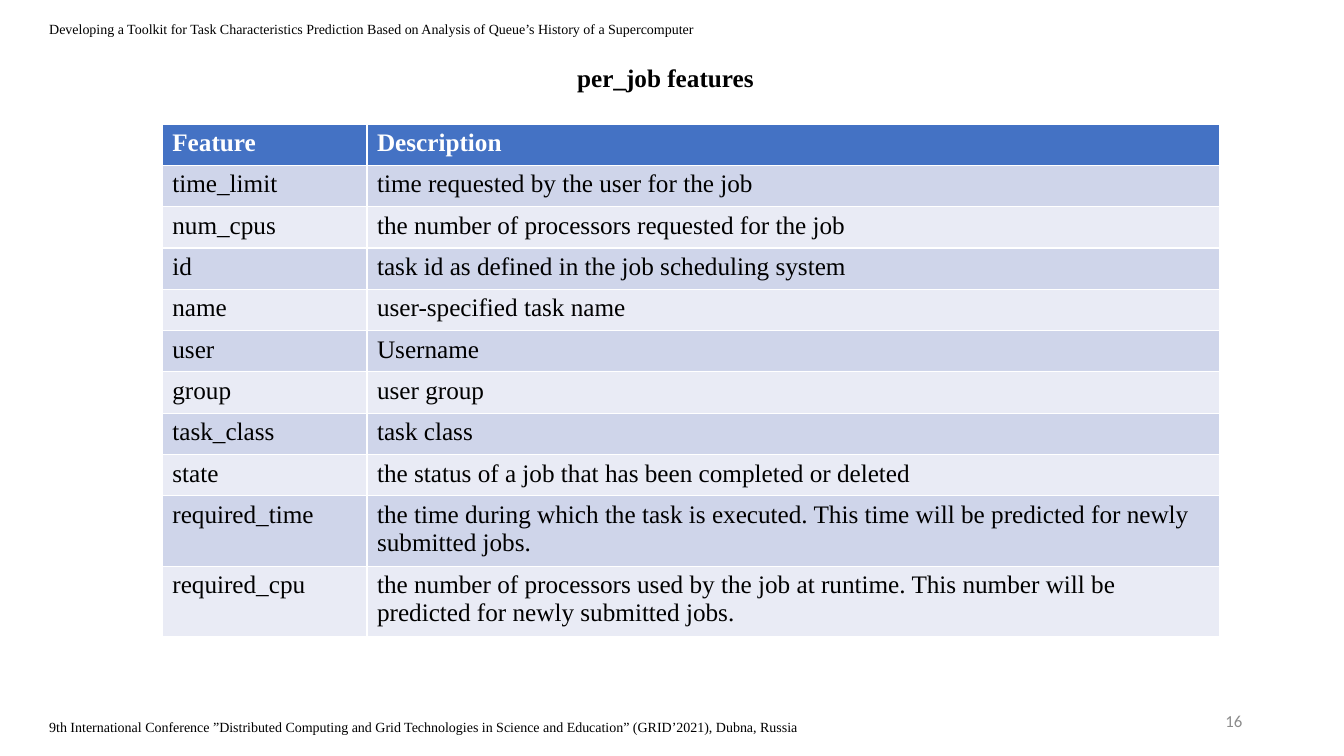
from dataclasses import dataclass

from pptx import Presentation
from pptx.dml.color import RGBColor
from pptx.enum.text import MSO_ANCHOR, PP_ALIGN
from pptx.util import Inches, Pt

LEFT, CENTER, RIGHT = PP_ALIGN.LEFT, PP_ALIGN.CENTER, PP_ALIGN.RIGHT
TOP, MIDDLE = MSO_ANCHOR.TOP, MSO_ANCHOR.MIDDLE
TITLE_ONLY = 5


@dataclass(frozen=True)
class Theme:
    serif: str = "Times New Roman"
    sans: str = "Calibri"
    black: str = "000000"
    white: str = "FFFFFF"
    grey: str = "8C8C8C"
    header: str = "4472C4"
    bands: tuple[str, str] = ("CFD5EA", "E9EBF5")
    body_size: int = 18
    number_size: int = 12
    note_size: int = 10


THEME = Theme()


@dataclass(frozen=True)
class Label:
    text: str
    left: float
    top: float
    width: float
    height: float
    size: int = THEME.note_size
    font: str = THEME.serif
    color: str = THEME.black
    align: PP_ALIGN = LEFT
    anchor: MSO_ANCHOR = TOP


@dataclass(frozen=True)
class Feature:
    name: str
    description: str


LABELS = [
    Label("Developing a Toolkit for Task Characteristics Prediction Based on "
          "Analysis of Queue’s History of a Supercomputer", 0.39, 0.15, 7.73, 0.27),
    Label("9th International Conference ”Distributed Computing and Grid Technologies "
          "in Science and Education” (GRID’2021), Dubna, Russia", 0.39, 7.08, 7.73, 0.27),
    Label("16", 9.42, 6.95, 3, 0.4, THEME.number_size, THEME.sans, THEME.grey,
          RIGHT, MIDDLE),
]

ROWS = [
    Feature("Feature", "Description"),
    Feature("time_limit", "time requested by the user for the job"),
    Feature("num_cpus", "the number of processors requested for the job"),
    Feature("id", "task id as defined in the job scheduling system"),
    Feature("name", "user-specified task name"),
    Feature("user", "Username"),
    Feature("group", "user group"),
    Feature("task_class", "task class"),
    Feature("state", "the status of a job that has been completed or deleted"),
    Feature("required_time", "the time during which the task is executed. "
            "This time will be predicted for newly submitted jobs."),
    Feature("required_cpu", "the number of processors used by the job at runtime. "
            "This number will be predicted for newly submitted jobs."),
]
COLUMN_WIDTHS = (2.03, 8.46)
ROW_HEIGHT = 0.41


def write(tf, text: str, size: int, font: str, color: str, bold: bool = False,
          align: PP_ALIGN = LEFT) -> None:
    tf.text = text
    p = tf.paragraphs[0]
    p.alignment = align
    r = p.runs[0]
    r.font.size, r.font.name, r.font.bold = Pt(size), font, bold
    r.font.color.rgb = RGBColor.from_string(color)


def add_label(s, label: Label) -> None:
    sp = s.shapes.add_textbox(Inches(label.left), Inches(label.top),
                              Inches(label.width), Inches(label.height))
    tf = sp.text_frame
    tf.word_wrap = True
    tf.vertical_anchor = label.anchor
    write(tf, label.text, label.size, label.font, label.color, align=label.align)


def set_title(s, text: str) -> None:
    sp = s.shapes.title
    sp.left, sp.top = Inches(0.8), Inches(0.57)
    sp.width, sp.height = Inches(11.73), Inches(0.4)
    tf = sp.text_frame
    tf.vertical_anchor = TOP
    tf.margin_right = Inches(0.23)
    write(tf, text, THEME.body_size, THEME.serif, THEME.black, True, CENTER)


def add_feature_table(s, rows: list[Feature]) -> None:
    table = s.shapes.add_table(
        len(rows), len(COLUMN_WIDTHS), Inches(1.61), Inches(1.23),
        Inches(sum(COLUMN_WIDTHS)), Inches(ROW_HEIGHT * len(rows))).table
    for column, width in zip(table.columns, COLUMN_WIDTHS):
        column.width = Inches(width)
    for i, row in enumerate(rows):
        table.rows[i].height = Inches(ROW_HEIGHT)
        is_header = i == 0
        fill = THEME.header if is_header else THEME.bands[(i - 1) % 2]
        color = THEME.white if is_header else THEME.black
        for j, text in enumerate((row.name, row.description)):
            cell = table.cell(i, j)
            cell.fill.solid()
            cell.fill.fore_color.rgb = RGBColor.from_string(fill)
            write(cell.text_frame, text, THEME.body_size, THEME.serif, color, is_header)


def main() -> None:
    prs = Presentation()
    prs.slide_width, prs.slide_height = Inches(13.33), Inches(7.5)
    s = prs.slides.add_slide(prs.slide_layouts[TITLE_ONLY])

    # Running header, footer and page number
    for label in LABELS:
        add_label(s, label)

    # Title and feature table
    set_title(s, "per_job features")
    add_feature_table(s, ROWS)

    prs.save("out.pptx")


if __name__ == "__main__":
    main()
